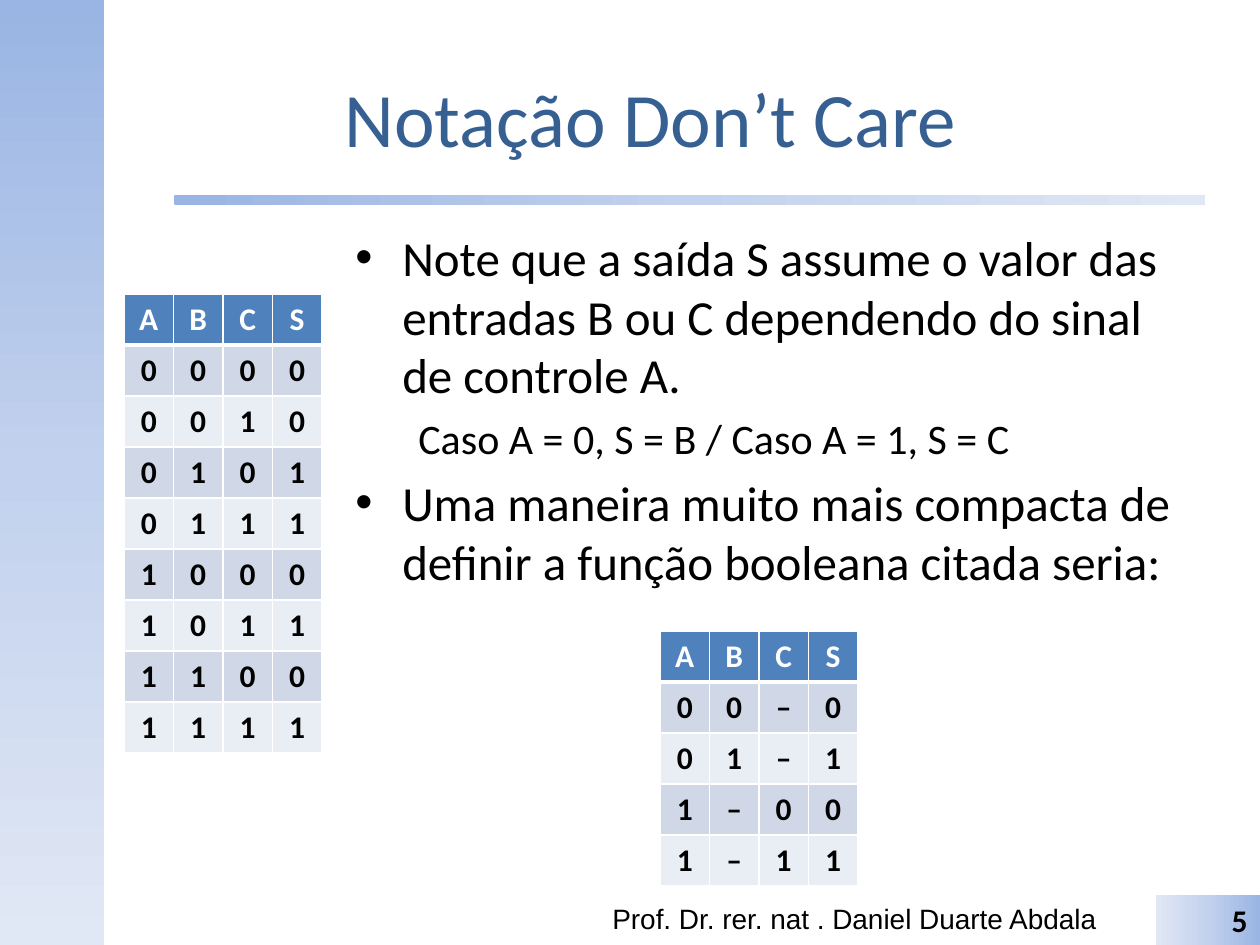
from dataclasses import dataclass
from itertools import product

from lxml import etree
from pptx import Presentation
from pptx import util as u
from pptx.dml.color import RGBColor
from pptx.enum import shapes, text
from pptx.oxml import ns

SCALE = 914400 / 126  # EMU in one px
LEFT, MID, RIGHT = text.PP_ALIGN.LEFT, text.PP_ALIGN.CENTER, text.PP_ALIGN.RIGHT


@dataclass(frozen=True)
class Theme:
    sans: str = "Calibri"
    foot: str = "Arial"
    ink: str = "000000"
    title: str = "376092"
    white: str = "FFFFFF"
    head: str = "4F81BD"
    bands: tuple = ("D0D8E8", "E9EDF4")
    fade: tuple = ((0, "9AB5E4"), (50, "C2D1ED"), (100, "E1E8F5"))
    huge: int = 44
    big: int = 28
    sub: int = 24
    cell: int = 18
    small: int = 16


def px(*nums):
    return [round(n * SCALE) for n in nums]


def node(top, tag, **attrs):
    item = etree.SubElement(top, ns.qn("a:" + tag))
    for key, val in attrs.items():
        item.set(key, str(val))
    return item


def write(frame, words, size, font="Calibri", color="000000", bold=False,
          align=LEFT, left=0, hang=0, gap=0, bullet=False):
    """Fill the empty first paragraph of the frame, or add one after it."""
    para = frame.paragraphs[0]
    if para.runs:
        para = frame.add_paragraph()
    para.alignment = align
    para.space_before = u.Pt(gap)
    props = para._p.get_or_add_pPr()
    margin, first = px(left, -hang)
    props.set("marL", str(margin))
    props.set("indent", str(first))
    if bullet:
        node(props, "buFont", typeface="Arial")
        node(props, "buChar", char="•")
    else:
        node(props, "buNone")
    run = para.add_run()
    run.text = words
    run.font.size = u.Pt(size)
    run.font.name = font
    run.font.bold = bold
    run.font.color.rgb = RGBColor.from_string(color)


class Page:
    """Holds the theme and the slide being drawn."""

    def __init__(self, deck, theme):
        self.theme = theme
        self.slide = deck.slides.add_slide(deck.slide_layouts[6])

    def band(self, box, angle, kind=shapes.MSO_SHAPE.RECTANGLE):
        """Add a shape with the theme's fade, its angle taken clockwise."""
        shape = self.slide.shapes.add_shape(kind, *px(*box))
        shape.shadow.inherit = False
        shape.line.fill.background()
        shape.fill.gradient()
        grad = shape._element.spPr.find(ns.qn("a:gradFill"))
        for child in list(grad):
            grad.remove(child)
        stops = node(grad, "gsLst")
        for place, color in self.theme.fade:
            node(node(stops, "gs", pos=place * 1000), "srgbClr", val=color)
        node(grad, "lin", ang=angle * 60000, scaled=0)
        shape.text_frame.vertical_anchor = text.MSO_ANCHOR.MIDDLE
        return shape

    def label(self, box, anchor=text.MSO_ANCHOR.TOP):
        frame = self.slide.shapes.add_textbox(*px(*box)).text_frame
        frame.word_wrap = True
        frame.vertical_anchor = anchor
        return frame

    def edge(self, cell, base):
        """Draw white cell borders, with the given width at the base."""
        props = cell._tc.get_or_add_tcPr()
        for spot, side in enumerate("LRTB"):
            width = u.Pt(base if side == "B" else 1)
            line = node(props, "ln" + side, w=int(width))
            node(node(line, "solidFill"), "srgbClr", val=self.theme.white)
            props.insert(spot, line)

    def table(self, left, top, rows):
        look = self.theme
        rows = ["ABCS", *rows]
        box = px(left, top, 198, 51 * len(rows))
        grid = self.slide.shapes.add_table(len(rows), 4, *box).table
        for i, j in product(range(len(rows)), range(4)):
            cell = grid.cell(i, j)
            fill = look.bands[(i - 1) % 2] if i else look.head
            cell.fill.solid()
            cell.fill.fore_color.rgb = RGBColor.from_string(fill)
            self.edge(cell, 1 if i else 3)
            write(cell.text_frame, rows[i][j], look.cell, look.sans,
                  look.ink if i else look.white, bold=True, align=MID)


def main():
    deck = Presentation()
    deck.slide_width, deck.slide_height = px(1260, 945)
    look = Theme()
    page = Page(deck, look)

    page.band((0, 0, 104, 945), 90)
    page.band((174, 195, 1031, 10), 0, shapes.MSO_SHAPE.ROUNDED_RECTANGLE)

    title = page.label((104, 38, 1093, 157), text.MSO_ANCHOR.MIDDLE)
    write(title, "Notação Don’t Care", look.huge, look.sans, look.title, align=MID)

    body = page.label((343, 221, 854, 624))
    point = dict(size=look.big, left=47, hang=47, gap=5.6, bullet=True)
    write(body, "Note que a saída S assume o valor das entradas B ou C "
          "dependendo do sinal de controle A.", **point)
    write(body, "Caso A = 0, S = B / Caso A = 1, S = C", look.sub,
          left=102, hang=39, gap=4.8)
    write(body, "Uma maneira muito mais compacta de definir a função "
          "booleana citada seria:", **point)

    foot = page.label((600, 895, 528, 50))
    write(foot, "Prof. Dr. rer. nat . Daniel Duarte Abdala", look.small, look.foot)

    full = [a + b + c + (c if a == "1" else b) for a, b, c in product("01", repeat=3)]
    page.table(124, 294, full)

    number = page.band((1156, 895, 104, 50), 180)
    write(number.text_frame, "5", look.cell, bold=True, align=RIGHT)

    page.table(660, 631, ["00–0", "01–1", "1–00", "1–11"])
    deck.save("out.pptx")


if __name__ == "__main__":
    main()
